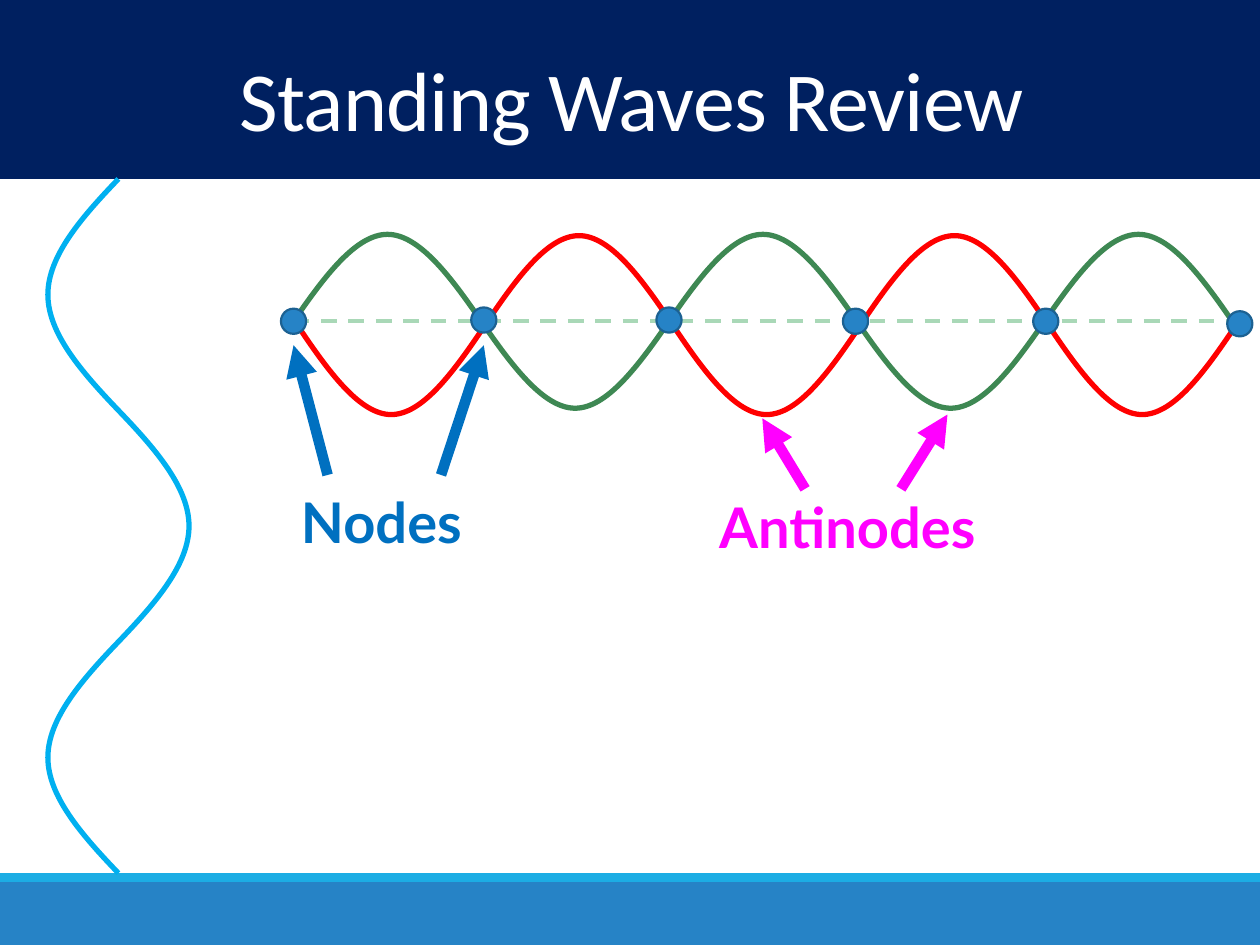
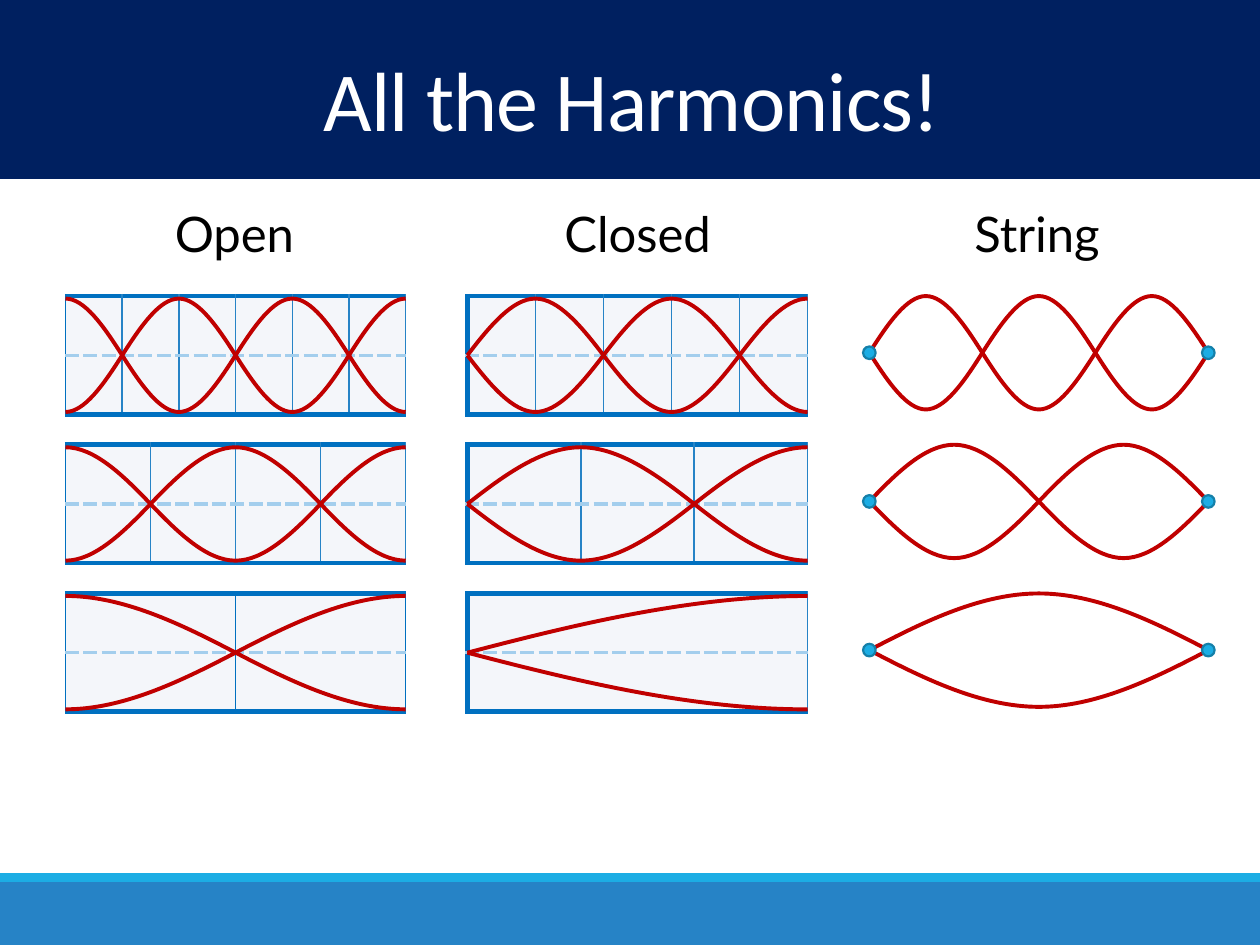
import math
import pptx
import pptx.util
import pptx.dml.color
import pptx.enum.dml
import pptx.enum.shapes
import pptx.enum.text
import pptx.oxml
import pptx.oxml.ns
from lxml import etree

Inches, Pt = pptx.util.Inches, pptx.util.Pt
rgb = pptx.dml.color.RGBColor.from_string
qn = pptx.oxml.ns.qn
SHAPE = pptx.enum.shapes.MSO_SHAPE
ALIGN = pptx.enum.text.PP_ALIGN

COLORS = {
    "navy": "002060", "band": "2683C6", "stripe": "1CADE4",
    "white": "FFFFFF", "black": "000000",
    "green": "3E8853", "pale_green": "A9D8B7", "red": "FF0000",
    "sky": "00B0F0", "blue": "0070C0", "magenta": "FF00FF",
    "node_edge": "1C6192", "wave": "C00000", "end_edge": "1580A9",
    "tube": "F4F6FA", "axis": "A3CEED",
}


def add_shape(s, kind, x, y, w, h, fill, edge=None):
    sp = s.shapes.add_shape(kind, Inches(x), Inches(y), Inches(w), Inches(h))
    sp.shadow.inherit = False
    sp.fill.solid()
    sp.fill.fore_color.rgb = rgb(COLORS[fill])
    if edge:
        sp.line.color.rgb = rgb(COLORS[edge])
        sp.line.width = Pt(1.25)
    else:
        sp.line.fill.background()
    return sp


def add_wave(s, start, end, mid, amp, quarters, color, width, phase=0, vertical=False):
    """Draw a sine wave with one Bezier curve for each quarter wavelength."""
    step = (end - start) / quarters
    points = []
    for i in range(3 * quarters + 1):
        # Control points lie on the tangent at the nearest quarter
        nearest = round(i / 3)
        angle = phase + nearest * math.pi / 2
        offset = (i / 3 - nearest) * math.pi / 2
        across = mid - amp * (math.sin(angle) + offset * math.cos(angle))
        along = start + step * i / 3
        point = (across, along) if vertical else (along, across)
        points.append(tuple(Inches(v) for v in point))
    builder = s.shapes.build_freeform(*points[0])
    builder.add_line_segments(points[1:], close=False)
    sp = builder.convert_to_shape()
    # Join each three points into one curve
    outline = sp.element.find(".//" + qn("a:path"))
    segments = outline.findall(qn("a:lnTo"))
    for i in range(0, len(segments), 3):
        curve = etree.SubElement(outline, qn("a:cubicBezTo"))
        for segment in segments[i:i + 3]:
            curve.append(segment[0])
            outline.remove(segment)
    sp.shadow.inherit = False
    sp.fill.background()
    sp.line.color.rgb = rgb(COLORS[color])
    sp.line.width = Pt(width)


prs = pptx.Presentation()
prs.slide_width, prs.slide_height = Inches(10), Inches(7.5)
layout = prs.slide_layouts.get_by_name("Title Only")

# Titles
slides = []
for title in ("Standing Waves Review", "All the Harmonics!"):
    s = prs.slides.add_slide(layout)
    slides.append(s)
    sp = s.shapes.title
    sp.left, sp.top, sp.width, sp.height = (Inches(v) for v in (0.03, 0.42, 9.97, 0.84))
    tf = sp.text_frame
    tf.auto_size = pptx.enum.text.MSO_AUTO_SIZE.NONE
    tf.vertical_anchor = pptx.enum.text.MSO_ANCHOR.MIDDLE
    p = tf.paragraphs[0]
    p.alignment = ALIGN.CENTER
    p.line_spacing = 0.85
    r = p.add_run()
    r.text = title
    r.font.size = Pt(48)
    r.font.name = "Calibri"
    r.font.color.rgb = rgb(COLORS["white"])
    r.font._element.set("spc", "-50")
review, harmonics = slides

# Shared bands, moved into the layout
for y, h, fill in ((7, 0.5, "band"), (6.93, 0.07, "stripe"), (0, 1.42, "navy")):
    sp = add_shape(review, SHAPE.RECTANGLE, 0, y, 10, h, fill)
    layout.shapes.element.append(sp.element)

# Review: rest line and arrows
lines = [
    (2.33, 2.55, 9.84, 2.55, "pale_green", 2.25),
    (3.5, 3.77, 3.84, 2.74, "blue", 6),
    (2.6, 3.77, 2.33, 2.74, "blue", 6),
    (7.15, 3.88, 7.52, 3.29, "magenta", 6),
    (6.39, 3.88, 6.05, 3.32, "magenta", 6),
]
for x1, y1, x2, y2, color, width in lines:
    c = review.shapes.add_connector(
        pptx.enum.shapes.MSO_CONNECTOR.STRAIGHT,
        Inches(x1), Inches(y1), Inches(x2), Inches(y2))
    c.line.color.rgb = rgb(COLORS[color])
    c.line.width = Pt(width)
    if color == "pale_green":
        c.line.dash_style = pptx.enum.dml.MSO_LINE.DASH
    else:
        ln = c.element.spPr.find(qn("a:ln"))
        etree.SubElement(ln, qn("a:tailEnd"), type="triangle")
    etree.SubElement(c.element.spPr, qn("a:effectLst"))

# Review: standing wave with its nodes, and the wave on the left
add_wave(review, 2.33, 9.78, 2.55, 0.69, 10, "green", 3)
add_wave(review, 2.36, 9.81, 2.58, -0.71, 10, "red", 3)
for x, y in ((2.33, 2.55), (3.84, 2.54), (5.31, 2.54), (6.79, 2.55), (8.3, 2.55), (9.84, 2.57)):
    add_shape(review, SHAPE.OVAL, x - 0.1, y - 0.1, 0.2, 0.2, "band", "node_edge")
add_wave(review, 1.42, 6.93, 0.94, 0.56, 6, "sky", 3, vertical=True)

# Harmonics: one row each, from the third down to the first
for row, n in enumerate((3, 2, 1)):
    top = 2.35 + 1.18 * row
    # Tubes: one column per quarter wavelength
    for x, quarters, phase, end_width in ((0.52, 2 * n, math.pi / 2, 0.75), (3.71, 2 * n - 1, 0, 3)):
        frame = harmonics.shapes.add_table(
            2, quarters, Inches(x), Inches(top), Inches(2.7), Inches(0.94))
        table = frame.table
        table.first_row = table.horz_banding = False
        inner = ("blue", 0.75) if quarters == 2 else ("band", 1)
        wall, axis = ("blue", 3), ("axis", 2.25)
        for i in range(2):
            for j in range(quarters):
                cell = table.cell(i, j)
                cell.fill.solid()
                cell.fill.fore_color.rgb = rgb(COLORS["tube"])
                borders = {
                    "lnL": inner if j else ("blue", end_width),
                    "lnR": inner,
                    "lnT": axis if i else wall,
                    "lnB": wall if i else axis,
                }
                tcPr = cell._tc.get_or_add_tcPr()
                for k, (tag, (color, width)) in enumerate(borders.items()):
                    ln = etree.Element(qn("a:" + tag), w=str(Pt(width)))
                    fill = etree.SubElement(ln, qn("a:solidFill"))
                    etree.SubElement(fill, qn("a:srgbClr"), val=COLORS[color])
                    if color == "axis":
                        etree.SubElement(ln, qn("a:prstDash"), val="dash")
                    tcPr.insert(k, ln)
        for amp in (0.45, -0.45):
            add_wave(harmonics, x, x + 2.7, top + 0.47, amp, quarters, "wave", 2.25, phase)
    # String fixed at both ends
    mid = top + 0.45
    for amp in (0.45, -0.45):
        add_wave(harmonics, 6.9, 9.59, mid, amp, 2 * n, "wave", 2.25)
    for x in (6.9, 9.59):
        add_shape(harmonics, SHAPE.OVAL, x - 0.05, mid - 0.05, 0.1, 0.1, "stripe", "end_edge")

# Labels of both slides
labels = [
    (review, "Nodes", 2.29, 3.82, 1.55, 0.64, 32, "blue"),
    (review, "Antinodes", 5.61, 3.86, 2.36, 0.64, 32, "magenta"),
    (harmonics, "Open", 0.52, 1.57, 2.68, 0.57, 28, "black"),
    (harmonics, "Closed", 3.72, 1.57, 2.68, 0.57, 28, "black"),
    (harmonics, "String", 6.89, 1.57, 2.68, 0.57, 28, "black"),
]
for s, text, x, y, w, h, size, color in labels:
    heading = s is harmonics
    sp = s.shapes.add_textbox(Inches(x), Inches(y), Inches(w), Inches(h))
    tf = sp.text_frame
    tf.word_wrap = heading
    tf.auto_size = pptx.enum.text.MSO_AUTO_SIZE.SHAPE_TO_FIT_TEXT
    p = tf.paragraphs[0]
    p.alignment = ALIGN.CENTER if heading else ALIGN.LEFT
    r = p.add_run()
    r.text = text
    r.font.size = Pt(size)
    r.font.name = "Lato"
    r.font.bold = not heading
    r.font.color.rgb = rgb(COLORS[color])

prs.save("out.pptx")
